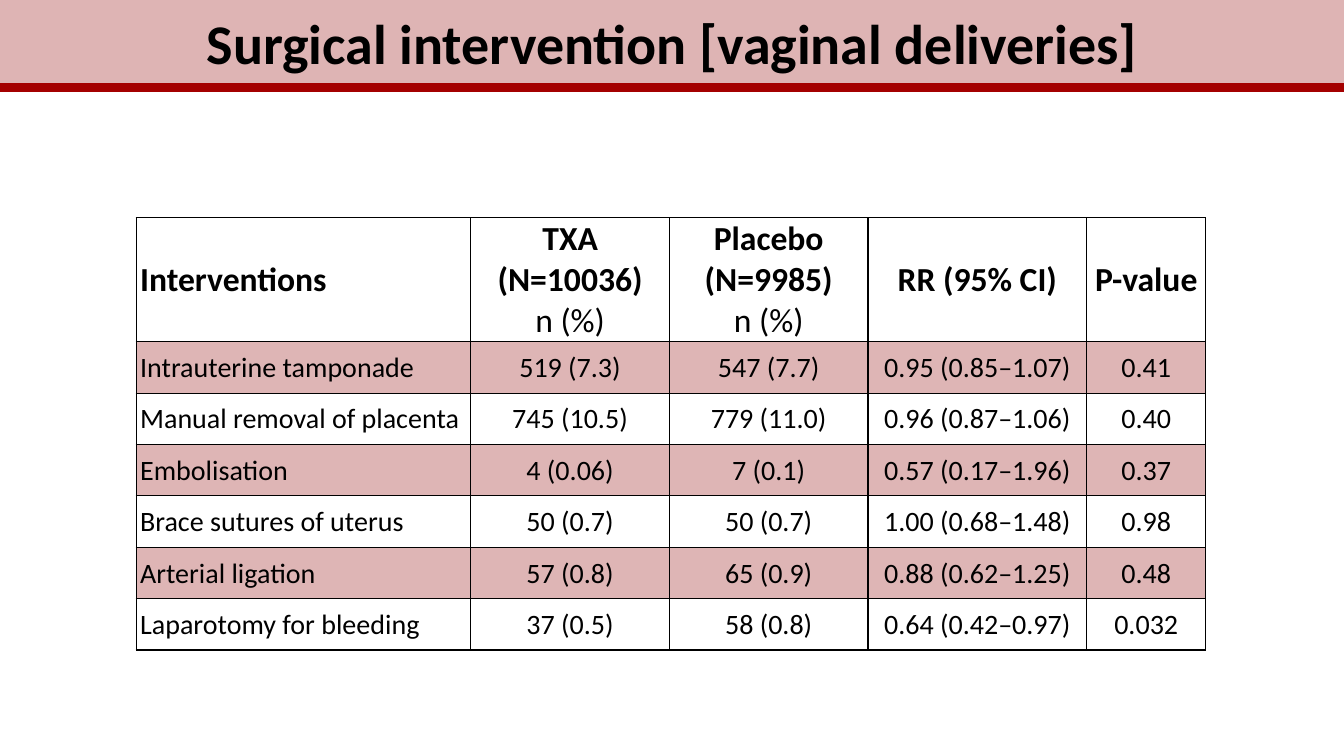
from lxml import etree
from pptx import Presentation
from pptx.dml.color import RGBColor
from pptx.enum.shapes import MSO_CONNECTOR, MSO_SHAPE
from pptx.enum.text import MSO_ANCHOR, PP_ALIGN
from pptx.oxml.ns import qn
from pptx.util import Inches, Pt

FONT = "Calibri"
BLACK = RGBColor(0x00, 0x00, 0x00)
BANNER_PINK = RGBColor(0xDE, 0xB4, 0xB4)
BAND_PINK = RGBColor(0xDE, 0xB5, 0xB5)
DARK_RED = RGBColor(0xA4, 0x00, 0x00)

LEFT, CENTER = PP_ALIGN.LEFT, PP_ALIGN.CENTER
MIDDLE, BOTTOM = MSO_ANCHOR.MIDDLE, MSO_ANCHOR.BOTTOM
RECTANGLE = MSO_SHAPE.RECTANGLE
STRAIGHT = MSO_CONNECTOR.STRAIGHT

SLIDE_WIDTH = 13.33
COLUMN_WIDTHS = [3.32, 1.97, 1.97, 2.17, 1.18]
HEADER_HEIGHT, ROW_HEIGHT = 1.22, 0.51
ROWS = [
    ["Interventions", "TXA (N=10036)\nn (%)", "Placebo (N=9985)\nn (%)", "RR (95% CI)", "P-value"],
    ["Intrauterine tamponade", "519 (7.3)", "547 (7.7)", "0.95 (0.85–1.07)", "0.41"],
    ["Manual removal of placenta", "745 (10.5)", "779 (11.0)", "0.96 (0.87–1.06)", "0.40"],
    ["Embolisation", "4 (0.06)", "7 (0.1)", "0.57 (0.17–1.96)", "0.37"],
    ["Brace sutures of uterus", "50 (0.7)", "50 (0.7)", "1.00 (0.68–1.48)", "0.98"],
    ["Arterial ligation", "57 (0.8)", "65 (0.9)", "0.88 (0.62–1.25)", "0.48"],
    ["Laparotomy for bleeding", "37 (0.5)", "58 (0.8)", "0.64 (0.42–0.97)", "0.032"],
]


def format_paragraph(para, size, bold, align):
    para.alignment = align
    for span in para.runs:
        span.font.name = FONT
        span.font.size = Pt(size)
        span.font.bold = bold
        span.font.color.rgb = BLACK


def add_banner(page, title):
    banner = page.shapes.add_shape(RECTANGLE, 0, 0, Inches(SLIDE_WIDTH), Inches(0.91))
    banner.shadow.inherit = False
    banner.fill.solid()
    banner.fill.fore_color.rgb = BANNER_PINK
    banner.line.fill.background()
    frame = banner.text_frame
    frame.word_wrap = True
    frame.vertical_anchor = MIDDLE
    frame.text = title
    para = frame.paragraphs[0]
    para.line_spacing = 0.9
    format_paragraph(para, 40, True, CENTER)


def add_rule(page, y):
    rule = page.shapes.add_connector(
        STRAIGHT, Inches(0), Inches(y), Inches(SLIDE_WIDTH), Inches(y))
    rule.line.color.rgb = DARK_RED
    rule.line.width = Pt(6)
    etree.SubElement(rule._element.spPr, qn("a:effectLst"))


def add_borders(cell):
    # Borders must come before the fill in the cell properties
    properties = cell._tc.get_or_add_tcPr()
    for position, side in enumerate(("a:lnL", "a:lnR", "a:lnT", "a:lnB")):
        border = etree.Element(qn(side), w=str(Pt(1)))
        fill = etree.SubElement(border, qn("a:solidFill"))
        etree.SubElement(fill, qn("a:srgbClr"), val=str(BLACK))
        properties.insert(position, border)


def fill_cell(cell, text, is_header, is_label, is_banded):
    cell.text = text
    paragraphs = cell.text_frame.paragraphs
    cell.vertical_anchor = BOTTOM if len(paragraphs) > 1 else MIDDLE
    cell.margin_left = cell.margin_right = Inches(0.04 if is_label else 0.01)
    cell.margin_top, cell.margin_bottom = Inches(0.01), Inches(0)
    for index, para in enumerate(paragraphs):
        format_paragraph(para, 24 if is_header else 20, is_header and index == 0,
                         LEFT if is_label else CENTER)
    if is_banded:
        cell.fill.solid()
        cell.fill.fore_color.rgb = BAND_PINK
    else:
        cell.fill.background()
    add_borders(cell)


def add_results_table(page):
    height = HEADER_HEIGHT + ROW_HEIGHT * (len(ROWS) - 1)
    table = page.shapes.add_table(
        len(ROWS), len(COLUMN_WIDTHS), Inches(1.35), Inches(2.16),
        Inches(sum(COLUMN_WIDTHS)), Inches(height)).table
    table.horz_banding = False
    for column, width in zip(table.columns, COLUMN_WIDTHS):
        column.width = Inches(width)
    for row_index, texts in enumerate(ROWS):
        is_header = row_index == 0
        table.rows[row_index].height = Inches(HEADER_HEIGHT if is_header else ROW_HEIGHT)
        for column_index, text in enumerate(texts):
            fill_cell(table.cell(row_index, column_index), text, is_header,
                      column_index == 0, row_index % 2 == 1)


def main():
    deck = Presentation()
    deck.slide_width, deck.slide_height = Inches(SLIDE_WIDTH), Inches(7.5)
    page = deck.slides.add_slide(deck.slide_layouts[6])

    # Title banner with its red rule
    add_banner(page, "Surgical intervention [vaginal deliveries]")
    add_rule(page, 0.87)

    # Trial results
    add_results_table(page)

    deck.save("out.pptx")


if __name__ == "__main__":
    main()
